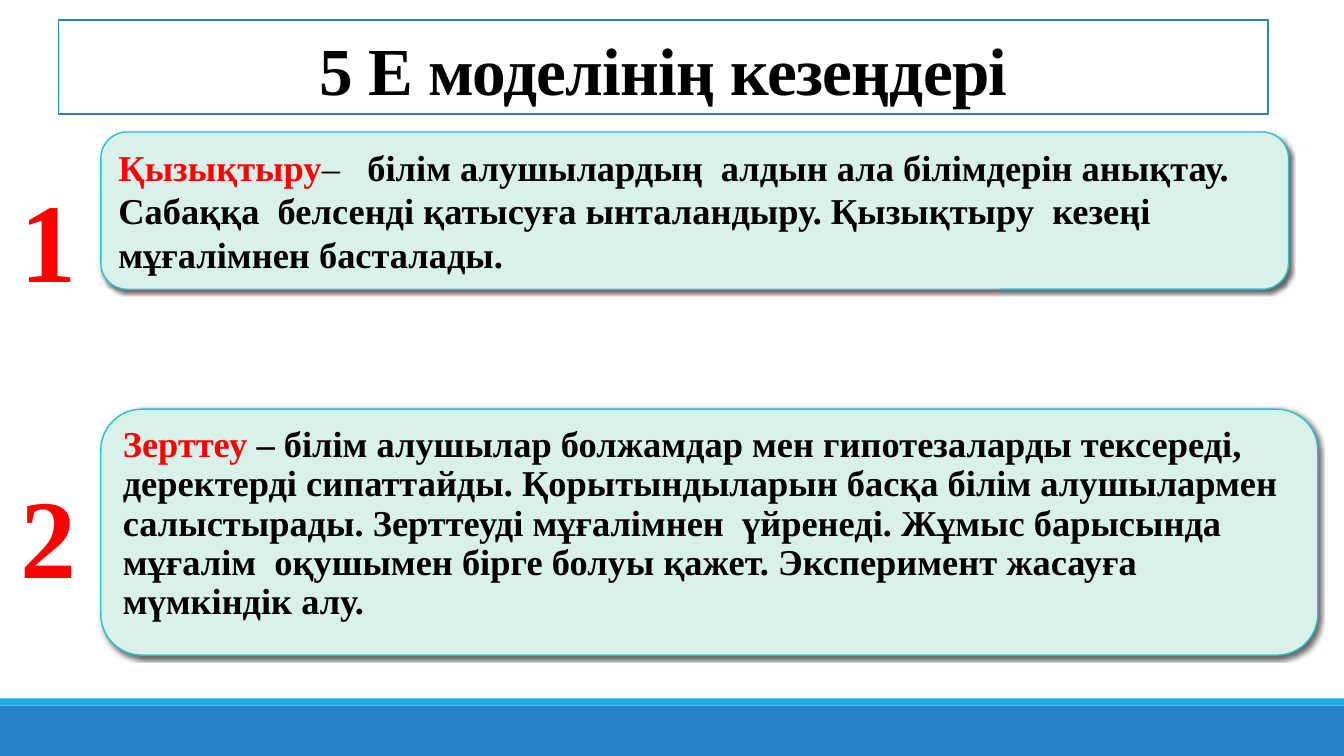
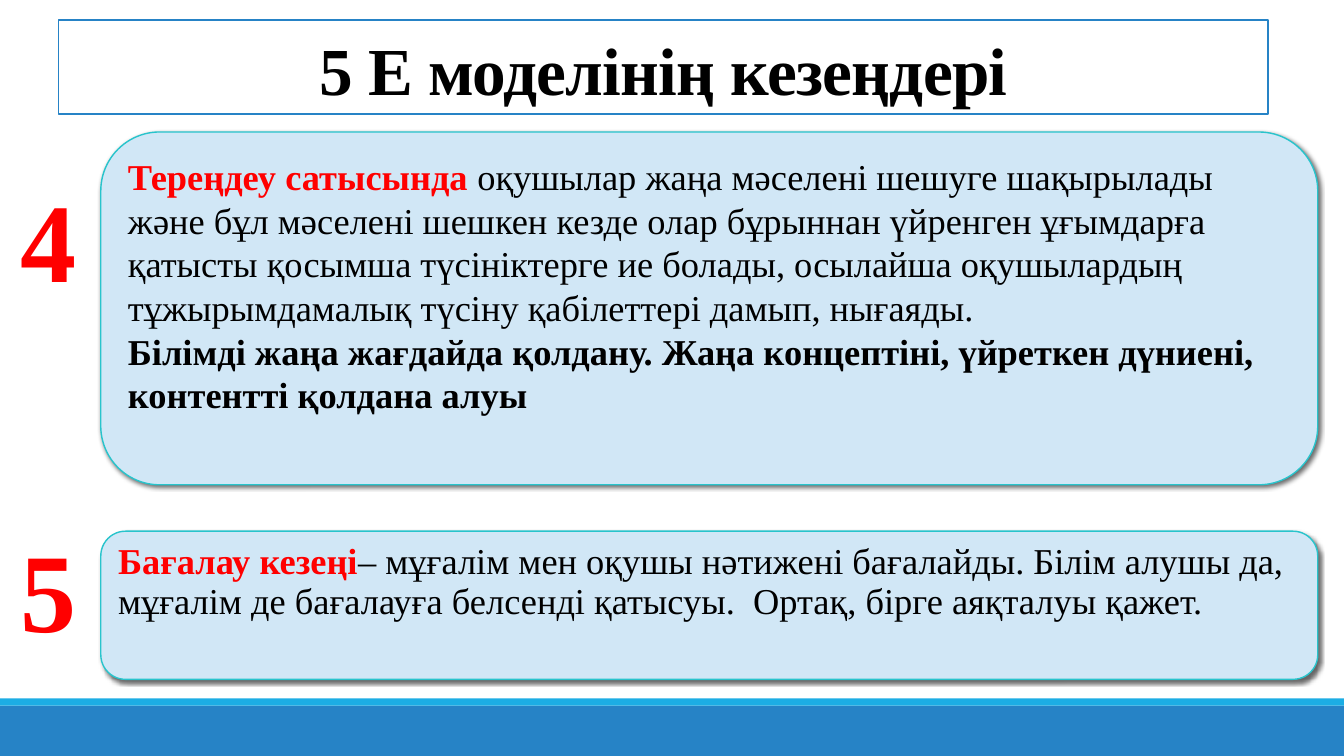
from lxml import etree
from pptx import Presentation
from pptx import util as u
from pptx.dml.color import RGBColor
from pptx.enum import shapes, text
from pptx.oxml import ns

BLUE = RGBColor(0x26, 0x83, 0xC6)
SKY = RGBColor(0x1C, 0xAD, 0xE4)
TEAL = RGBColor(0x28, 0xC4, 0xCC)
MINT = RGBColor(0xD9, 0xF1, 0xEA)
PALE = RGBColor(0xD1, 0xE7, 0xF6)
RED = RGBColor(0xFF, 0, 0)
BLACK = RGBColor(0, 0, 0)
WHITE = RGBColor(0xFF, 0xFF, 0xFF)
FONT = "Times New Roman"
TITLE = "5 E моделінің кезеңдері"
TITLE_BOX = (0.58, 0.2, 12, 0.93)
BANDS = [((0, 7, 13.33, 0.5), BLUE), ((0, 6.93, 13.33, 0.07), SKY)]


def inches(box):
    return [u.Inches(n) for n in box]


def place(shape, box):
    shape.left, shape.top, shape.width, shape.height = inches(box)


def sub(node, tag, **attrs):
    return etree.SubElement(node, ns.qn("a:" + tag), attrs)


def tint(node, color):
    return sub(sub(node, "solidFill"), "srgbClr", val=str(color))


def add_run(para, words, size, color=BLACK, bold=True):
    run = para.add_run()
    run.text = words
    font = run.font
    font.name, font.size, font.bold = FONT, u.Pt(size), bold
    font.color.rgb = color
    return run


def fill_text(frame, paras):
    frame.word_wrap = True
    frame.auto_size = text.MSO_AUTO_SIZE.NONE
    frame.vertical_anchor = text.MSO_ANCHOR.TOP
    for i, runs in enumerate(paras):
        para = frame.add_paragraph() if i else frame.paragraphs[0]
        para.alignment = text.PP_ALIGN.LEFT
        for words, color, bold in runs:
            add_run(para, words, 26, color, bold)


def add_bands(slide, master):
    # Footer bands live on the master, behind every slide
    for i, (box, color) in enumerate(BANDS):
        band = slide.shapes.add_shape(shapes.MSO_SHAPE.RECTANGLE, *inches(box))
        band.shadow.inherit = False
        band.fill.solid()
        band.fill.fore_color.rgb = color
        band.line.fill.background()
        band.element.nvSpPr.cNvPr.set("id", str(20 + i))
        master.element.cSld.spTree.insert(2 + i, band.element)


def add_title(slide, box):
    title = slide.shapes.title
    place(title, box)
    title.fill.solid()
    title.fill.fore_color.rgb = WHITE
    title.line.color.rgb = BLUE
    title.line.width = u.Pt(1.25)
    frame = title.text_frame
    frame.auto_size = text.MSO_AUTO_SIZE.NONE
    frame.vertical_anchor = text.MSO_ANCHOR.BOTTOM
    para = frame.paragraphs[0]
    para.alignment = text.PP_ALIGN.CENTER
    para.line_spacing = 0.85
    run = add_run(para, TITLE, 48)
    run.font._element.set("spc", "-50")


def style_card(card, color):
    card.fill.solid()
    card.fill.fore_color.rgb = color
    card.line.color.rgb = TEAL
    card.line.width = u.Pt(1)
    card.shadow.inherit = False
    effects = card.element.spPr.find(ns.qn("a:effectLst"))
    glow = sub(effects, "outerShdw", blurRad="38100", dist="25400",
               dir="2700000", algn="tl", rotWithShape="0")
    sub(sub(glow, "srgbClr", val=str(BLACK)), "alpha", val="60000")


def add_body(slide, box, color, paras):
    # Lower card: the body placeholder with rounded corners
    card = slide.placeholders[1]
    place(card, box)
    geom = etree.Element(ns.qn("a:prstGeom"), prst="roundRect")
    sub(geom, "avLst")
    card.element.spPr.insert(1, geom)
    style_card(card, color)
    frame = card.text_frame
    frame.margin_left = frame.margin_right = 0
    fill_text(frame, paras)
    for para in frame.paragraphs:
        props = para._p.get_or_add_pPr()
        props.set("marL", str(u.Inches(0.1)))
        props.set("indent", str(u.Inches(-0.1)))
        sub(sub(props, "buClr"), "srgbClr", val=str(SKY))
        sub(props, "buChar", char=" ")
        para.line_spacing = 0.9
        para.space_before, para.space_after = u.Pt(0), u.Pt(2)


def add_card(slide, box, color, paras):
    card = slide.shapes.add_shape(
        shapes.MSO_SHAPE.ROUNDED_RECTANGLE, *inches(box))
    style_card(card, color)
    fill_text(card.text_frame, paras)


def add_digit(slide, top, digit):
    box = slide.shapes.add_textbox(*inches((0.1, top, 1.21, 1.45)))
    box.text_frame.word_wrap = True
    run = add_run(box.text_frame.paragraphs[0], digit, 80, RED)
    edge = etree.Element(ns.qn("a:ln"), w=str(u.Pt(1)))
    tint(edge, SKY)
    run.font._element.insert(0, edge)


def add_stage(prs, color, upper, lower):
    slide = prs.slides.add_slide(prs.slide_layouts[1])
    add_title(slide, TITLE_BOX)
    add_body(slide, lower["box"], color, lower["paras"])
    add_card(slide, upper["box"], color, upper["paras"])
    for part in (upper, lower):
        add_digit(slide, part["top"], part["digit"])
    return slide


# Each stage: card box, digit with its top, paragraphs of (words, colour, bold)
ENGAGE = dict(box=(1, 1.31, 11.78, 1.56), digit="1", top=1.64, paras=[[
    ("Қызықтыру", RED, True),
    ("–   ", BLACK, False),
    ("білім алушылардың  алдын ала білімдерін анықтау. Сабаққа  белсенді "
     "қатысуға ынталандыру. Қызықтыру  кезеңі мұғалімнен басталады.",
     BLACK, True)]])
EXPLORE = dict(box=(1, 4.06, 12.07, 2.44), digit="2", top=4.58, paras=[[
    ("Зерттеу ", RED, True),
    ("– білім алушылар болжамдар мен гипотезаларды тексереді, деректерді "
     "сипаттайды. Қорытындыларын басқа білім алушылармен салыстырады. "
     "Зерттеуді мұғалімнен  үйренеді. Жұмыс барысында  мұғалім  оқушымен "
     "бірге болуы қажет. Эксперимент жасауға мүмкіндік алу.", BLACK, True)]])
EXTEND = dict(box=(1, 1.31, 12.07, 3.5), digit="4", top=1.64, paras=[
    [("Тереңдеу сатысында ", RED, True),
     ("оқушылар жаңа мәселені шешуге шақырылады және бұл мәселені шешкен "
      "кезде олар бұрыннан үйренген ұғымдарға қатысты қосымша түсініктерге "
      "ие болады, осылайша оқушылардың тұжырымдамалық түсіну қабілеттері "
      "дамып, нығаяды.", BLACK, False)],
    [("Білімді жаңа жағдайда қолдану. Жаңа концептіні, үйреткен дүниені, "
      "контентті қолдана алуы", BLACK, True)]])
ASSESS = dict(box=(1, 5.27, 12.07, 1.47), digit="5", top=5.11, paras=[[
    ("Бағалау кезеңі", RED, True),
    ("– мұғалім мен оқушы нәтижені бағалайды. Білім алушы да, мұғалім де "
     "бағалауға белсенді қатысуы.  Ортақ, бірге аяқталуы қажет.",
     BLACK, False)]])


def main():
    prs = Presentation()
    prs.slide_width, prs.slide_height = u.Inches(13.33), u.Inches(7.5)
    first = add_stage(prs, MINT, ENGAGE, EXPLORE)
    add_stage(prs, PALE, EXTEND, ASSESS)
    add_bands(first, prs.slide_master)
    prs.save("out.pptx")


if __name__ == "__main__":
    main()
